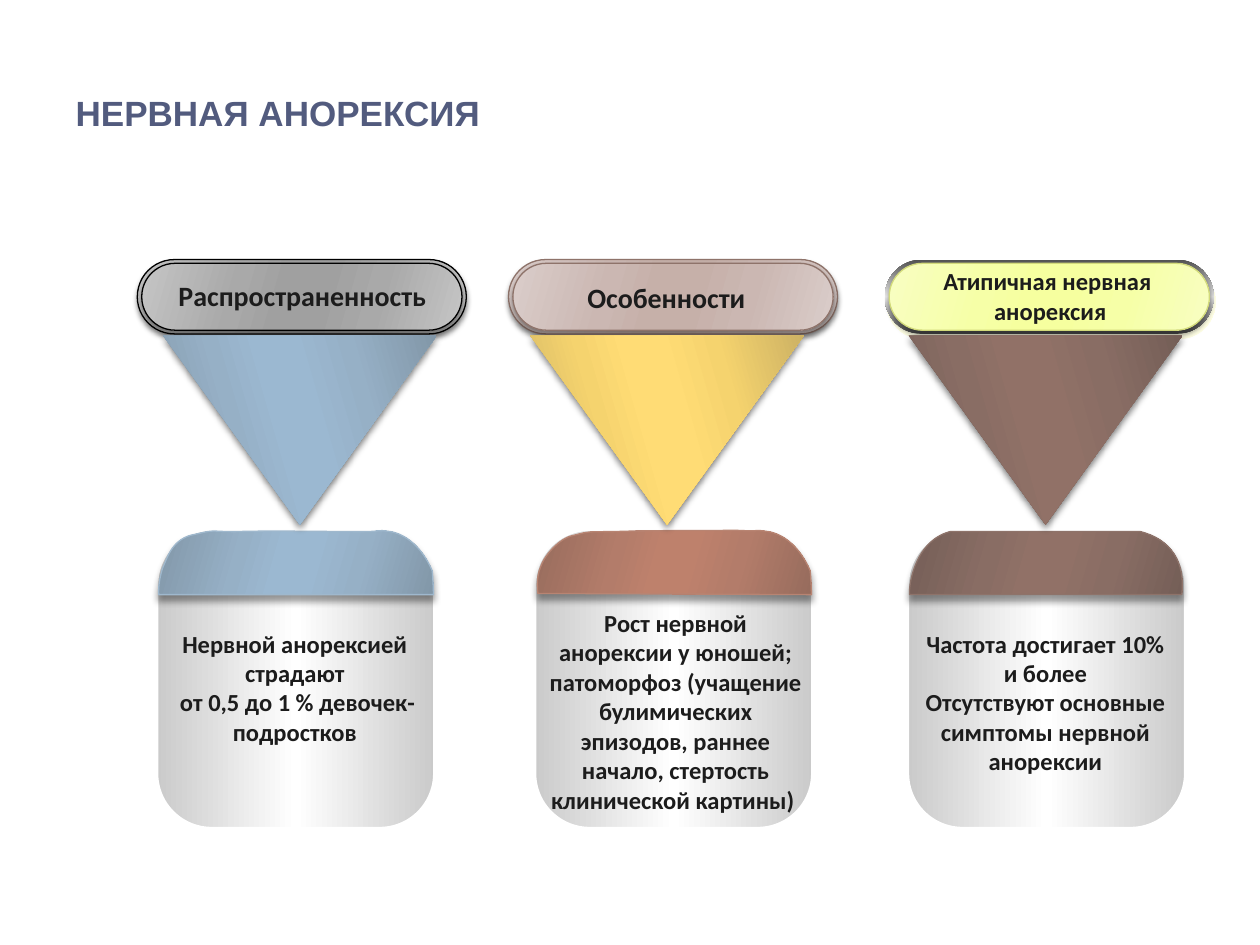
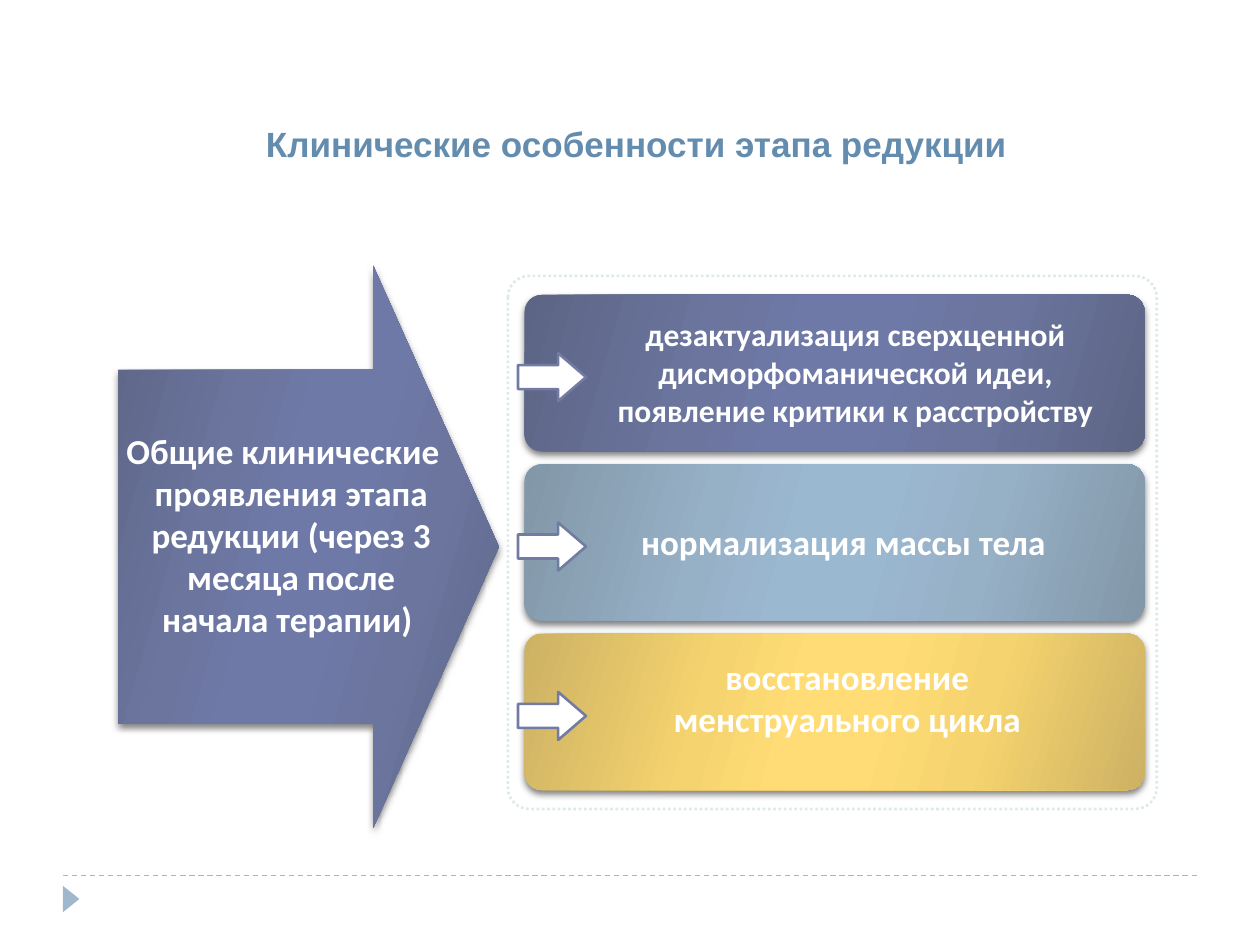
from lxml import etree
from pptx import Presentation
from pptx.dml.color import RGBColor
from pptx.enum import dml, shapes, text
from pptx.oxml import ns
from pptx.util import Pt

KIND = shapes.MSO_SHAPE
ALIGN = text.PP_ALIGN
ANCHOR = text.MSO_ANCHOR

INK, WHITE, STEEL, VIOLET = "1C1C1C", "FFFFFF", "9FB8CD", "727CA3"
TINTS = {
    "blue": ("8297A8", "96B0C6", "9BB8D1"),
    "yellow": ("CDB264", "F5D36E", "FFDC75"),
    "brown": ("745E57", "896D64", "917167"),
    "rust": ("976C5D", "B37C6A", "BE816C"),
    "violet": ("5D6585", "6B759E", "6E79A7"),
    "grey pill": ("C5C5C5", "A9A9A9", "A0A0A0"),
    "rose pill": ("DACDCA", "CBB7B2", "C6B0A9"),
    "lime pill": ("F8FEC2", "F6FFA7", "F6FF9F"),
    "card": ("CACACA", "FFFFFF"),
    "rim": ("505050", "EAEAEA"),
}
PILL_SHADOW = ("000000", 40, 3, 2, 90)
CAP_SHADOW = ("000000", 40, 4, 3.4, 90)
BLOCK_SHADOW = ("000000", 50, 4, 2, 90)
RIM_SHADOW = ("FFFFCC", 50, 0, 3.2, 72)

CAP_RIGHT = [
    (130.3, 1.4), (123.8, 0), (133.2, 1.4),
    (141.8, 2.9), (151.2, 10.1), (157, 23.8),
    (157.7, 32.4), (157.7, 37.4), (157.7, 37.4),
]
CAP_BLUE = [
    (0.7, 37.4),
    (0.7, 37.4), (0, 31.7), (2.9, 22.3),
    (5.8, 15.8), (8.6, 5), (21.6, 2.9),
    (33.8, 0), (29.5, 1.4), (44.6, 1.4),
    (60.5, 0.7), (100.8, 1.4), (115.9, 1.4),
] + CAP_RIGHT
CAP_RUST = [
    (1.4, 36.7),
    (1.4, 36.7), (0, 28.1), (2.9, 21.6),
    (5, 15.1), (13.7, 5), (21.6, 3.6),
    (30.2, 1.4), (28.8, 1.4), (44.6, 1.4),
    (59.8, 0.7), (100.8, 0.7), (115.9, 0.7),
] + CAP_RIGHT
CAP_BROWN = [
    (0.7, 37.4),
    (0, 35.3), (2.2, 7.2), (23.8, 1.4),
    (23.8, 1.4), (132.5, 1.4), (132.5, 1.4),
    (154.8, 7.2), (157.7, 24.5), (156.2, 37.4),
]

COLUMNS = [
    dict(label=["Распространенность"], label_at=(93.6, 155.5, 158.4, 26.6),
         label_size=16, label_align=ALIGN.CENTER,
         pill_left=78.5, pill="grey pill", pill_line="000000",
         rim="grey pill", rim_line="000000", rim_shadow=PILL_SHADOW,
         arrow_left=93.3, arrow="blue",
         left=90, cap=CAP_BLUE, cap_tint="blue", cap_line=STEEL, body_at=(89.3, 355.7),
         body=["Нервной анорексией страдают", " от 0,5 до 1 % девочек-подростков"]),
    dict(label=["Особенности"], label_at=(328.5, 157, 118.8, 26.6),
         label_size=16, label_align=ALIGN.LEFT,
         pill_left=290.6, pill="rose pill", pill_line="8E736A",
         rim="rose pill", rim_line="8E736A", rim_shadow=PILL_SHADOW,
         arrow_left=303.1, arrow="yellow",
         left=306, cap=CAP_RUST, cap_tint="rust", cap_line="B88472", body_at=(306.9, 343.9),
         body=["Рост нервной анорексии у юношей; патоморфоз (учащение булимических "
               "эпизодов, раннее начало, стертость клинической картины) "]),
    dict(label=["Атипичная нервная ", "анорексия"], label_at=(531.4, 148.7, 137.5, 41),
         label_size=14, label_align=ALIGN.CENTER,
         pill_left=505.6, pill="lime pill", pill_line="D2DA7A",
         rim="rim", rim_line=None, rim_shadow=RIM_SHADOW,
         arrow_left=519.4, arrow="brown",
         left=519.1, cap=CAP_BROWN, cap_tint="brown", cap_line="8E736A", body_at=(518.2, 355.7),
         body=["Частота достигает 10% и более",
               "Отсутствуют основные симптомы нервной анорексии"]),
]
SIGNS = [
    ("violet", "дезактуализация сверхценной дисморфоманической идеи, "
     "появление критики к расстройству", 18, (342.4, 176.4, 293, 72.7)),
    ("blue", "нормализация массы тела ", 20, (337.7, 293.8, 293, 31.7)),
    ("yellow", "восстановление менструального цикла", 20, (337.7, 371.2, 293, 80)),
]
STAGE = "Общие клинические проявления этапа редукции (через 3 месяца после начала терапии) "


def color(code):
    return RGBColor.from_string(code)


def points(values):
    return [Pt(value) for value in values]


def child(parent, tag, **attributes):
    return etree.SubElement(parent, ns.qn(tag), {k: str(v) for k, v in attributes.items()})


def paint_gradient(shape, tint, angle):
    colors = TINTS[tint]
    if len(colors) == 2:
        edge, core = colors
        stops = [(0, edge), (50, core), (100, edge)]
    else:
        edge, middle, core = colors
        stops = zip((0, 30, 45, 55, 73, 100), (edge, middle, core, core, middle, edge))
    shape.fill.gradient()
    gradient = shape._element.spPr.find(ns.qn("a:gradFill"))
    for old in list(gradient):
        gradient.remove(old)
    stop_list = child(gradient, "a:gsLst")
    for position, code in stops:
        stop = child(stop_list, "a:gs", pos=position * 1000)
        child(stop, "a:srgbClr", val=code)
    child(gradient, "a:lin", ang=angle * 60000, scaled=0)


def style(shape, tint=None, fill=None, angle=16, line=None, width=0.75, shadow=None):
    if tint:
        paint_gradient(shape, tint, angle)
    elif fill:
        shape.fill.solid()
        shape.fill.fore_color.rgb = color(fill)
    else:
        shape.fill.background()
    if line:
        shape.line.color.rgb = color(line)
        shape.line.width = Pt(width)
    else:
        shape.line.fill.background()
    shape.shadow.inherit = False
    if shadow:
        code, opacity, blur, distance, direction = shadow
        effects = shape._element.spPr.find(ns.qn("a:effectLst"))
        outer = child(effects, "a:outerShdw", blurRad=Pt(blur), dist=Pt(distance),
                      dir=direction * 60000, algn="ctr", rotWithShape=0)
        child(child(outer, "a:srgbClr", val=code), "a:alpha", val=opacity * 1000)


def add_block(parent, kind, place, adjustments=(), **look):
    shape = parent.shapes.add_shape(kind, *points(place))
    for index, value in enumerate(adjustments):
        shape.adjustments[index] = value
    style(shape, **look)
    return shape


def write(frame, lines, size, ink, font="Calibri", align=ALIGN.CENTER,
          anchor=ANCHOR.TOP, wrap=True):
    settings = dict(word_wrap=wrap, vertical_anchor=anchor, auto_size=text.MSO_AUTO_SIZE.NONE)
    for name, value in settings.items():
        setattr(frame, name, value)
    for index, line in enumerate(lines):
        para = frame.add_paragraph() if index else frame.paragraphs[0]
        para.alignment = align
        span = para.add_run()
        span.text = line
        for name, value in dict(size=Pt(size), name=font, bold=True).items():
            setattr(span.font, name, value)
        span.font.color.rgb = color(ink)


def add_text(page, place, lines, size, ink, **options):
    box = page.shapes.add_textbox(*points(place))
    write(box.text_frame, lines, size, ink, **options)
    return box


def add_page(deck, title, place, ink, **options):
    page = deck.slides.add_slide(deck.slide_layouts[5])
    heading = page.shapes.title
    heading.left, heading.top, heading.width, heading.height = points(place)
    write(heading.text_frame, [title], 20, ink, font="Arial", **options)
    return page


def add_curve(page, spots, left, top):
    start, *rest = [(Pt(left + x), Pt(top + y)) for x, y in spots]
    builder = page.shapes.build_freeform(*start)
    builder.add_line_segments(rest, close=True)
    shape = builder.convert_to_shape()
    segments = list(shape._element.iter(ns.qn("a:lnTo")))
    for first in range(0, len(rest), 3):
        trio = segments[first:first + 3]
        curve = etree.Element(ns.qn("a:cubicBezTo"))
        trio[0].addprevious(curve)
        for segment in trio:
            curve.append(segment[0])
            segment.getparent().remove(segment)
    return shape


def add_column(page, column):
    left = column["left"]
    add_block(page, KIND.ROUNDED_RECTANGLE, (left - 1, 302, 160, 172), (0.2,),
              tint="card", angle=0, line=WHITE, width=3)
    cap = add_curve(page, column["cap"], left, 302.4)
    style(cap, tint=column["cap_tint"], line=column["cap_line"], shadow=CAP_SHADOW)
    add_text(page, (*column["body_at"], 158.4, 126), column["body"], 14, INK)

    pill_left = column["pill_left"]
    group = page.shapes.add_group_shape()
    add_block(group, KIND.ROUNDED_RECTANGLE, (pill_left, 148.3, 188, 42.5), (0.5,),
              tint=column["rim"], angle=16 if column["rim_line"] else 90,
              line=column["rim_line"], shadow=column["rim_shadow"])
    add_block(group, KIND.ROUNDED_RECTANGLE, (pill_left + 2.5, 150.5, 183, 38.2), (0.5,),
              tint=column["pill"], line=column["pill_line"], shadow=PILL_SHADOW)
    add_text(page, column["label_at"], column["label"], column["label_size"], INK,
             align=column["label_align"], wrap=False)
    arrow = add_block(page, KIND.ISOSCELES_TRIANGLE, (column["arrow_left"], 191.9, 156.2, 108),
                      tint=column["arrow"], shadow=BLOCK_SHADOW)
    arrow._element.spPr.xfrm.set("flipV", "1")


def add_footer(page):
    rule = page.shapes.add_connector(shapes.MSO_CONNECTOR.STRAIGHT, *points((36, 500.4, 684, 500.4)))
    rule.line.color.rgb = color(STEEL)
    rule.line.width = Pt(0.75)
    rule.line.dash_style = dml.MSO_LINE.DASH
    child(rule._element.spPr, "a:effectLst")
    marker = add_block(page, KIND.ISOSCELES_TRIANGLE, (33.1, 509, 15.1, 9.4), fill=STEEL)
    marker.rotation = 90


def build_anorexia(deck):
    page = add_page(deck, "НЕРВНАЯ АНОРЕКСИЯ", (36, 47.5, 648, 32.4), "525B7E",
                    align=ALIGN.LEFT, anchor=ANCHOR.BOTTOM)
    for column in COLUMNS:
        add_column(page, column)


def build_reduction(deck):
    page = add_page(deck, "Клинические особенности этапа редукции ", (36.7, 52.2, 659.5, 59),
                    "638CAE", anchor=ANCHOR.MIDDLE)
    add_footer(page)
    add_block(page, KIND.RIGHT_ARROW, (67.7, 152, 217.4, 321), (0.63, 0.33),
              tint="violet", shadow=BLOCK_SHADOW)
    stage = add_text(page, (61.2, 242, 201, 128), [STAGE], 20, WHITE)
    indent = stage.text_frame.paragraphs[0]._p.get_or_add_pPr()
    indent.set("marL", str(Pt(9.4)))
    indent.set("indent", str(Pt(-9.4)))
    frame = add_block(page, KIND.ROUNDED_RECTANGLE, (290.2, 157.7, 370.8, 304.6), (0.04,),
                      line="DDE9EC", width=1.5)
    frame.line.dash_style = dml.MSO_LINE.ROUND_DOT
    for row, (tint, line, size, place) in enumerate(SIGNS):
        top = 168.4 + row * 96.8
        group = page.shapes.add_group_shape()
        add_block(group, KIND.ROUNDED_RECTANGLE, (299.7, top, 354.4, 89.5), (0.11,),
                  tint=tint, shadow=BLOCK_SHADOW)
        add_block(group, KIND.RIGHT_ARROW, (296, top + 33.4, 38.9, 27.4), (0.5, 0.58),
                  fill=WHITE, line=VIOLET, width=1.5)
        add_text(page, place, [line], size, WHITE)


def main():
    deck = Presentation()
    deck.slide_width, deck.slide_height = points((720, 540))
    build_anorexia(deck)
    build_reduction(deck)
    deck.save("out.pptx")


if __name__ == "__main__":
    main()
